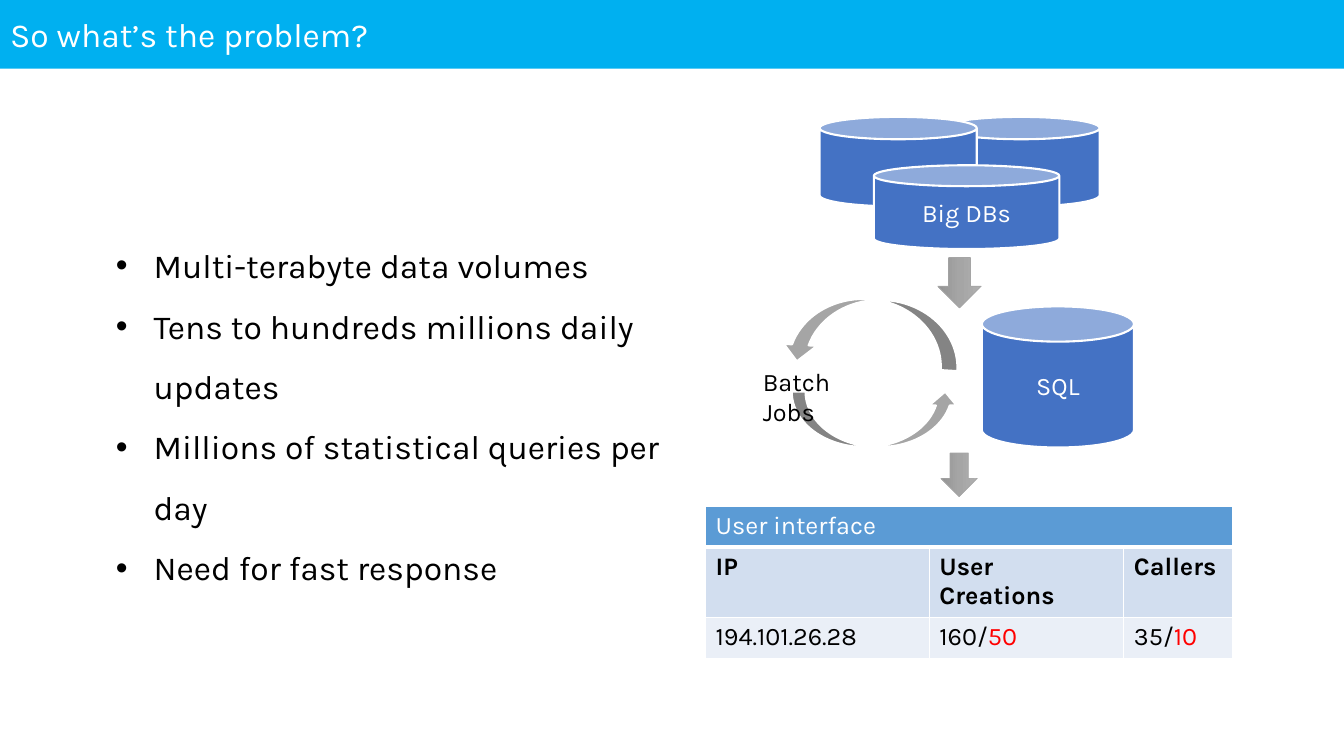
from copy import deepcopy

from lxml import etree
from pptx import Presentation
from pptx.dml.color import RGBColor
from pptx.enum.shapes import MSO_SHAPE
from pptx.enum.text import MSO_ANCHOR, MSO_AUTO_SIZE, PP_ALIGN
from pptx.oxml.ns import qn
from pptx.util import Pt

CAN = MSO_SHAPE.CAN
RIGHT_ARROW = MSO_SHAPE.RIGHT_ARROW
CURVED_ARROW = MSO_SHAPE.CURVED_RIGHT_ARROW
LEFT, CENTER = PP_ALIGN.LEFT, PP_ALIGN.CENTER
MIDDLE = MSO_ANCHOR.MIDDLE
FIXED, GROW = MSO_AUTO_SIZE.NONE, MSO_AUTO_SIZE.SHAPE_TO_FIT_TEXT
FONT = "Karla"
COLORS = {
    "banner": "00B0F0", "database": "4472C4", "gray": "A5A5A5",
    "gray_light": "AFAFAF", "gray_dark": "939393",
    "white": "FFFFFF", "black": "000000", "red": "FF0000",
    "table_head": "5B9BD5", "table_labels": "D2DEEF", "table_values": "EAEFF7",
}
REQUIREMENTS = [
    "Multi-terabyte data volumes",
    "Tens to hundreds millions daily updates",
    "Millions of statistical queries per day",
    "Need for fast response",
]


def rgb(name):
    return RGBColor.from_string(COLORS[name])


def write(paragraph, text, size=18, color="black", bold=False, align=LEFT):
    paragraph.alignment = align
    run = paragraph.add_run()
    run.text = text
    run.font.name = FONT
    run.font.size = Pt(size)
    run.font.bold = bold
    run.font.color.rgb = rgb(color)


def add_title(slide, box):
    title = slide.shapes.title
    title.left, title.top, title.width, title.height = map(Pt, box)
    title.fill.solid()
    title.fill.fore_color.rgb = rgb("banner")
    title.text_frame.auto_size = FIXED
    title.text_frame.vertical_anchor = MIDDLE
    write(title.text_frame.paragraphs[0], "So what’s the problem?", size=24, color="white")


def add_text_frame(slide, box):
    frame = slide.shapes.add_textbox(*map(Pt, box)).text_frame
    frame.word_wrap = True
    frame.auto_size = GROW
    return frame


def add_requirements(slide, box):
    frame = add_text_frame(slide, box)
    for index, requirement in enumerate(REQUIREMENTS):
        paragraph = frame.add_paragraph() if index else frame.paragraphs[0]
        properties = paragraph._p.get_or_add_pPr()
        properties.set("marL", str(Pt(27)))
        properties.set("indent", str(-Pt(27)))
        etree.SubElement(properties, qn("a:buFont"), typeface="Arial")
        etree.SubElement(properties, qn("a:buChar"), char="•")
        paragraph.line_spacing = 1.5
        write(paragraph, requirement, size=24)


def add_figure(slide, kind, box, fill="gray", line="white", weight=1.5, rotation=0):
    figure = slide.shapes.add_shape(kind, *map(Pt, box))
    figure.shadow.inherit = False
    figure.rotation = rotation
    figure.fill.solid()
    figure.fill.fore_color.rgb = rgb(fill)
    figure.line.color.rgb = rgb(line)
    figure.line.width = Pt(weight)
    return figure


def add_database(slide, box, label=""):
    database = add_figure(slide, CAN, box, fill="database")
    if label:
        database.text_frame.vertical_anchor = MIDDLE
        write(database.text_frame.paragraphs[0], label, color="white", align=CENTER)


def add_down_arrow(slide, box):
    arrow = add_figure(slide, RIGHT_ARROW, box, line="gray", weight=0.5, rotation=90)
    arrow.fill.gradient()
    stop_list = arrow._element.spPr.find(qn("a:gradFill")).find(qn("a:gsLst"))
    stop_list.insert(1, deepcopy(stop_list[0]))
    shades = ("gray_light", "gray", "gray_dark")
    for index, (stop, shade) in enumerate(zip(arrow.fill.gradient_stops, shades)):
        stop.position = index / 2
        stop.color.rgb = rgb(shade)
    arrow.fill.gradient_angle = 270


def add_big_databases(slide, left, top):
    for offset in (87.8, 0):
        add_database(slide, (left + offset, top, 112.3, 64))
    add_database(slide, (left + 38.8, top + 34.6, 132.5, 59.8), "Big DBs")
    add_down_arrow(slide, (left + 82, top + 103, 36, 31))


def add_batch_cycle(slide, left, top):
    add_figure(slide, CURVED_ARROW, (left + 67.7, top + 65.6, 39.6, 119.5), rotation=270)
    add_figure(slide, CURVED_ARROW, (left + 60.5, top, 47.5, 126.7), rotation=93.5)
    frame = add_text_frame(slide, (left, top + 83.6, 95, 23.8))
    write(frame.paragraphs[0], "Batch Jobs")


def add_sql_store(slide, left, top):
    add_database(slide, (left + 31.7, top, 108.7, 100.8), "SQL")
    add_down_arrow(slide, (left, top + 107.3, 31, 25.9))


def format_cell(cell, fill, top_weight, bottom_weight):
    properties = cell._tc.get_or_add_tcPr()
    weights = {"lnL": 1, "lnR": 1, "lnT": top_weight, "lnB": bottom_weight}
    for side, weight in weights.items():
        border = etree.SubElement(properties, qn(f"a:{side}"), w=str(Pt(weight)))
        solid = etree.SubElement(border, qn("a:solidFill"))
        etree.SubElement(solid, qn("a:srgbClr"), val=COLORS["white"])
    cell.fill.solid()
    cell.fill.fore_color.rgb = rgb(fill)


def add_user_interface(slide, left, top):
    columns, row_height = (159.8, 139, 77.8), 29.4
    rows = [
        ("table_head", 1, 3, False, [[("User interface", "white")], [], []]),
        ("table_labels", 3, 1, True,
         [[(label, "black")] for label in ("IP", "User Creations", "Callers")]),
        ("table_values", 1, 1, False,
         [[("194.101.26.28", "black")],
          [("160/", "black"), ("50", "red")],
          [("35/", "black"), ("10", "red")]]),
    ]
    box = (left, top, sum(columns), row_height * len(rows))
    table = slide.shapes.add_table(len(rows), len(columns), *map(Pt, box)).table
    table.first_row = table.horz_banding = False
    for column, width in zip(table.columns, columns):
        column.width = Pt(width)
    for row, (fill, top_weight, bottom_weight, bold, contents) in zip(table.rows, rows):
        row.height = Pt(row_height)
        for cell, runs in zip(row.cells, contents):
            format_cell(cell, fill, top_weight, bottom_weight)
            for text, color in runs:
                write(cell.text_frame.paragraphs[0], text, color=color, bold=bold)
    table.cell(0, 0).merge(table.cell(0, len(columns) - 1))


def main():
    presentation = Presentation()
    presentation.slide_width, presentation.slide_height = Pt(960), Pt(540)
    slide = presentation.slides.add_slide(presentation.slide_layouts[5])
    add_title(slide, (0, 0, 960, 49))
    add_requirements(slide, (75.6, 157, 438.5, 181.4))
    add_big_databases(slide, 585.4, 83.5)
    add_batch_cycle(slide, 537.8, 174.2)
    add_sql_store(slide, 669.6, 218.9)
    add_user_interface(slide, 504, 361.4)
    presentation.save("out.pptx")


if __name__ == "__main__":
    main()
